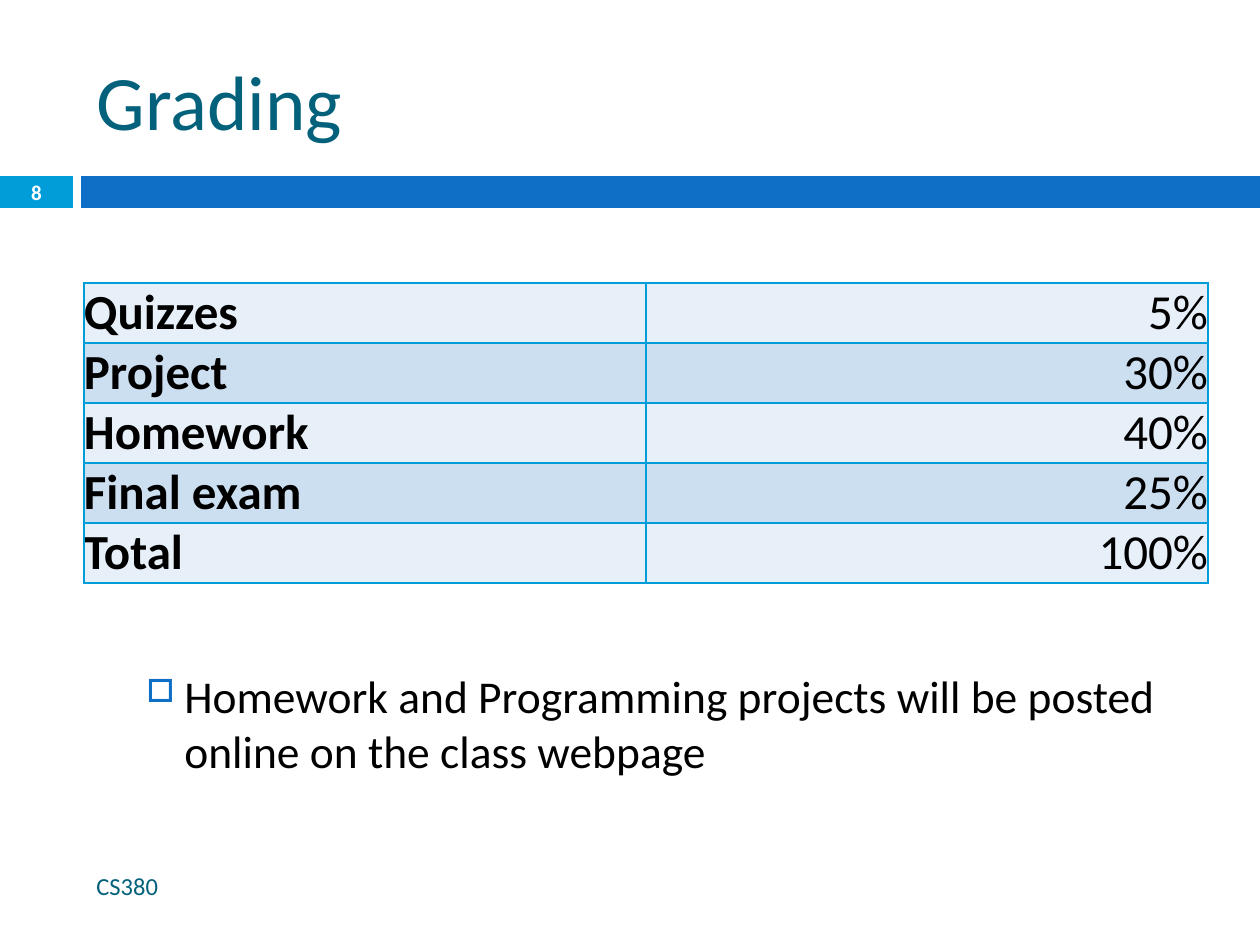
from dataclasses import dataclass

from lxml.etree import SubElement
from pptx import Presentation
from pptx.dml.color import RGBColor
from pptx.enum.shapes import MSO_SHAPE
from pptx.enum.text import MSO_ANCHOR, PP_ALIGN
from pptx.oxml.ns import qn
from pptx.util import Emu, Pt

EMU_PER_INCH = 914400
PX_PER_INCH = 126

FONT = "Calibri"
BLACK = RGBColor(0x00, 0x00, 0x00)
WHITE = RGBColor(0xFF, 0xFF, 0xFF)
TEAL = RGBColor(0x04, 0x61, 0x7B)
BLUE = RGBColor(0x0F, 0x6F, 0xC6)
CYAN = RGBColor(0x00, 0x9D, 0xD9)
ROW_FILLS = (RGBColor(0xE7, 0xEF, 0xF8), RGBColor(0xCC, 0xDF, 0xF1))


@dataclass(frozen=True)
class Box:
    left: int
    top: int
    width: int
    height: int

    def emu(self) -> tuple:
        return px(self.left), px(self.top), px(self.width), px(self.height)


@dataclass(frozen=True)
class Style:
    size: float
    color: RGBColor
    bold: bool = False
    align: PP_ALIGN = PP_ALIGN.LEFT


@dataclass(frozen=True)
class Grade:
    name: str
    share: str


NUMBER_BOX = Box(0, 176, 73, 32)
BAR_BOX = Box(81, 176, 1179, 32)
TITLE_BOX = Box(84, 32, 1124, 136)
TABLE_BOX = Box(84, 283, 1124, 300)
NOTE_BOX = Box(84, 662, 1124, 126)
FOOTER_BOX = Box(84, 861, 747, 50)

GRADES = (
    Grade("Quizzes", "5%"),
    Grade("Project", "30%"),
    Grade("Homework", "40%"),
    Grade("Final exam", "25%"),
    Grade("Total", "100%"),
)


def px(length: int) -> Emu:
    return Emu(round(length * EMU_PER_INCH / PX_PER_INCH))


def write(text_frame, text: str, style: Style):
    paragraph = text_frame.paragraphs[0]
    paragraph.text = text
    paragraph.alignment = style.align
    font = paragraph.font
    font.name = FONT
    font.size = Pt(style.size)
    font.bold = style.bold
    font.color.rgb = style.color
    return paragraph


def add_bar(slide, box: Box, color: RGBColor) -> None:
    bar = slide.shapes.add_shape(MSO_SHAPE.RECTANGLE, *box.emu())
    bar.shadow.inherit = False
    bar.fill.solid()
    bar.fill.fore_color.rgb = color
    bar.line.fill.background()


def add_text(slide, box: Box, text: str, style: Style, anchor=MSO_ANCHOR.MIDDLE):
    text_frame = slide.shapes.add_textbox(*box.emu()).text_frame
    text_frame.word_wrap = True
    text_frame.vertical_anchor = anchor
    return write(text_frame, text, style)


def add_bullet(paragraph, character: str, color: RGBColor, percent: int) -> None:
    """Give the paragraph a hanging bullet, ahead of its default run properties."""
    properties = paragraph._p.get_or_add_pPr()
    properties.set("marL", str(px(88)))
    properties.set("indent", str(px(-38)))
    bullet_color = SubElement(properties, qn("a:buClr"))
    SubElement(bullet_color, qn("a:srgbClr"), val=str(color))
    SubElement(properties, qn("a:buSzPct"), val=str(percent * 1000))
    SubElement(properties, qn("a:buChar"), char=character)
    properties.append(properties.find(qn("a:defRPr")))


def add_borders(cell, color: RGBColor) -> None:
    properties = cell._tc.get_or_add_tcPr()
    for side in ("lnL", "lnR", "lnT", "lnB"):
        line = SubElement(properties, qn(f"a:{side}"), w=str(Pt(1)))
        fill = SubElement(line, qn("a:solidFill"))
        SubElement(fill, qn("a:srgbClr"), val=str(color))


def fill_cell(cell, text: str, style: Style, color: RGBColor) -> None:
    cell.margin_left = cell.margin_right = cell.margin_top = cell.margin_bottom = 0
    cell.vertical_anchor = MSO_ANCHOR.BOTTOM
    add_borders(cell, CYAN)
    cell.fill.solid()
    cell.fill.fore_color.rgb = color
    write(cell.text_frame, text, style)


def add_grade_table(slide, box: Box, grades: tuple[Grade, ...]) -> None:
    table = slide.shapes.add_table(len(grades), 2, *box.emu()).table
    table.first_row = table.horz_banding = False
    name_style = Style(28, BLACK, bold=True)
    share_style = Style(28, BLACK, align=PP_ALIGN.RIGHT)
    for row, grade in enumerate(grades):
        color = ROW_FILLS[row % 2]
        fill_cell(table.cell(row, 0), grade.name, name_style, color)
        fill_cell(table.cell(row, 1), grade.share, share_style, color)


def main() -> None:
    presentation = Presentation()
    presentation.slide_width = px(1260)
    presentation.slide_height = px(945)
    slide = presentation.slides.add_slide(presentation.slide_layouts[5])

    add_bar(slide, NUMBER_BOX, CYAN)
    add_bar(slide, BAR_BOX, BLUE)

    title = slide.shapes.title
    title.left, title.top, title.width, title.height = TITLE_BOX.emu()
    title.text_frame.vertical_anchor = MSO_ANCHOR.MIDDLE
    write(title.text_frame, "Grading", Style(44, TEAL))

    note = add_text(
        slide,
        NOTE_BOX,
        "Homework and Programming projects will be posted online on the class webpage",
        Style(26, BLACK),
        MSO_ANCHOR.TOP,
    )
    note.space_before = Pt(5.5)
    add_bullet(note, "□", BLUE, 70)

    add_text(slide, FOOTER_BOX, "CS380", Style(14, TEAL))
    add_text(slide, NUMBER_BOX, "8", Style(12, WHITE, bold=True, align=PP_ALIGN.CENTER))
    add_grade_table(slide, TABLE_BOX, GRADES)

    presentation.save("out.pptx")


if __name__ == "__main__":
    main()
